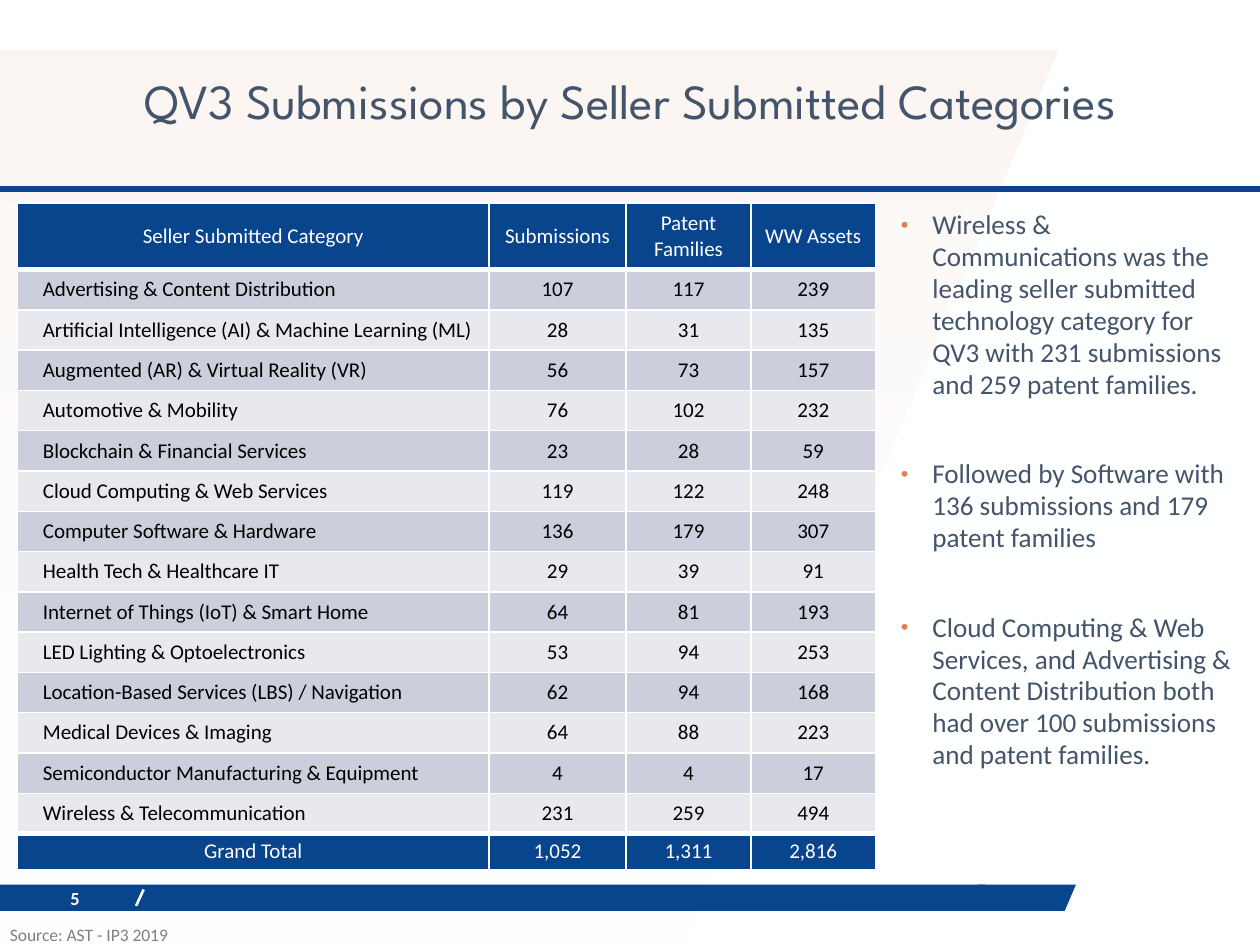
"""Build the slide of QV3 submissions by seller submitted category."""
import dataclasses
import typing

import lxml.etree
import pptx
import pptx.dml.color
import pptx.enum.shapes
import pptx.enum.text
import pptx.oxml.ns
import pptx.util

Inches = pptx.util.Inches
Pt = pptx.util.Pt
RGBColor = pptx.dml.color.RGBColor
Align = pptx.enum.text.PP_ALIGN
Anchor = pptx.enum.text.MSO_ANCHOR
qn = pptx.oxml.ns.qn

PAPER = RGBColor(0xFE, 0xFF, 0xFF)
WHITE = RGBColor(0xFF, 0xFF, 0xFF)
BLACK = RGBColor(0, 0, 0)
NAVY = RGBColor(0x09, 0x45, 0x8D)
SLATE = RGBColor(0x44, 0x54, 0x6A)
GRAY = RGBColor(0x80, 0x80, 0x80)
ORANGE = RGBColor(0xDD, 0x81, 0x4D)
CREAM = RGBColor(0xFD, 0xF9, 0xF6)
PEACH = RGBColor(0xEB, 0xB3, 0x94)
BANDS = (RGBColor(0xCC, 0xCF, 0xDB), RGBColor(0xE7, 0xE9, 0xEE))

BODY_FONT = "Calibri"
TITLE = "QV3 Submissions by Seller Submitted Categories"
SOURCE = "Source: AST - IP3 2019"
FINDINGS = (
    "Wireless & Communications was the leading seller submitted technology category "
    "for QV3 with 231 submissions and 259 patent families.",
    "Followed by Software with 136 submissions and 179 patent families",
    "Cloud Computing & Web Services, and Advertising & Content Distribution both had "
    "over 100 submissions and patent families.",
)
HEADINGS = ("Seller Submitted Category", "Submissions", "Patent Families", "WW Assets")
CATEGORIES = (
    ("Advertising & Content Distribution", "107", "117", "239"),
    ("Artificial Intelligence (AI) & Machine Learning (ML)", "28", "31", "135"),
    ("Augmented (AR) & Virtual Reality (VR)", "56", "73", "157"),
    ("Automotive & Mobility", "76", "102", "232"),
    ("Blockchain & Financial Services", "23", "28", "59"),
    ("Cloud Computing & Web Services", "119", "122", "248"),
    ("Computer Software & Hardware", "136", "179", "307"),
    ("Health Tech & Healthcare IT", "29", "39", "91"),
    ("Internet of Things (IoT) & Smart Home", "64", "81", "193"),
    ("LED Lighting & Optoelectronics", "53", "94", "253"),
    ("Location-Based Services (LBS) / Navigation", "62", "94", "168"),
    ("Medical Devices & Imaging", "64", "88", "223"),
    ("Semiconductor Manufacturing & Equipment", "4", "4", "17"),
    ("Wireless & Telecommunication", "231", "259", "494"),
)
TOTALS = ("Grand Total", "1,052", "1,311", "2,816")
COLUMN_WIDTHS = (3.74, 1.09, 0.99, 0.99)


@dataclasses.dataclass(frozen=True)
class RowStyle:
    height: float
    fill: RGBColor
    color: RGBColor
    margin: float = 0
    top: float = 1
    bottom: float = 1
    indented: bool = False


@dataclasses.dataclass(frozen=True)
class Rule:
    start: tuple[float, float]
    end: tuple[float, float]
    color: RGBColor
    width: float


RULES = (Rule((1.14, 7.06), (1.08, 7.19), WHITE, 1.5), Rule((0, 1.5), (10, 1.5), NAVY, 3))


def apply(target: typing.Any, values: dict[str, typing.Any]) -> None:
    for name, value in values.items():
        setattr(target, name, value)


def place(shape: typing.Any, left: float, top: float, width: float, height: float) -> None:
    lengths = zip(("left", "top", "width", "height"), (left, top, width, height))
    apply(shape, {name: Inches(length) for name, length in lengths})


def write(para: typing.Any, text: str, size: float, color: RGBColor,
          font: str = BODY_FONT, bold: bool = False) -> None:
    span = para.add_run()
    span.text = text
    apply(span.font, {"name": font, "size": Pt(size), "bold": bold})
    span.font.color.rgb = color


def add_label(page: typing.Any, area: tuple, text: str, size: float, color: RGBColor,
              bold: bool = False) -> None:
    box = page.shapes.add_textbox(*map(Inches, area))
    apply(box.text_frame, {"word_wrap": True, "vertical_anchor": Anchor.MIDDLE})
    write(box.text_frame.paragraphs[0], text, size, color, bold=bold)


def add_outline(page: typing.Any, points: list[tuple[float, float]]) -> typing.Any:
    corners = [(Inches(x), Inches(y)) for x, y in points]
    builder = page.shapes.build_freeform(*corners[0])
    builder.add_line_segments(corners[1:], close=True)
    shape = builder.convert_to_shape()
    shape.shadow.inherit = False
    shape.line.fill.background()
    return shape


def add_rule(page: typing.Any, rule: Rule) -> None:
    line = page.shapes.add_connector(
        pptx.enum.shapes.MSO_CONNECTOR.STRAIGHT, *map(Inches, rule.start + rule.end))
    line.line.color.rgb = rule.color
    line.line.width = Pt(rule.width)
    lxml.etree.SubElement(line._element.spPr, qn("a:effectLst"))


def add_backdrop(page: typing.Any) -> None:
    panel = add_outline(page, [(0, 0.4), (8.39, 0.4), (5.25, 7.9), (0, 7.9)])
    panel.fill.gradient()
    panel.fill.gradient_angle = 90
    for stop, color, opacity in zip(panel.fill.gradient_stops, (CREAM, PEACH), (0, 13)):
        stop.color.rgb = color
        tint = stop._gs.find(qn("a:srgbClr"))
        lxml.etree.SubElement(tint, qn("a:alpha"), val=str(opacity * 1000))
    tip = add_outline(page, [(7.76, 7.02), (8.54, 7.02), (8.45, 7.23), (7.76, 7.23)])
    bar = page.shapes.add_shape(
        pptx.enum.shapes.MSO_SHAPE.RECTANGLE, *map(Inches, (0, 7.02, 7.82, 0.21)))
    bar.shadow.inherit = False
    bar.line.fill.background()
    for shape in (tip, bar):
        shape.fill.solid()
        shape.fill.fore_color.rgb = NAVY
    add_label(page, (0.46, 7.03, 0.61, 0.19), "5", 10.5, WHITE, bold=True)
    for rule in RULES:
        add_rule(page, rule)


def set_borders(cell: typing.Any, style: RowStyle) -> None:
    properties = cell._tc.get_or_add_tcPr()
    widths = {"lnL": 1, "lnR": 1, "lnT": style.top, "lnB": style.bottom}
    for position, (side, width) in enumerate(widths.items()):
        edge = lxml.etree.Element(qn(f"a:{side}"), w=str(Pt(width)))
        fill = lxml.etree.SubElement(edge, qn("a:solidFill"))
        lxml.etree.SubElement(fill, qn("a:srgbClr"), val=str(WHITE))
        properties.insert(position, edge)


def fill_row(table: typing.Any, index: int, texts: tuple, style: RowStyle) -> None:
    table.rows[index].height = Inches(style.height)
    sides = ("left", "right", "top", "bottom")
    for column, text in enumerate(texts):
        cell = table.cell(index, column)
        apply(cell, {f"margin_{side}": Inches(style.margin) for side in sides})
        cell.vertical_anchor = Anchor.MIDDLE
        cell.fill.solid()
        cell.fill.fore_color.rgb = style.fill
        set_borders(cell, style)
        para = cell.text_frame.paragraphs[0]
        if style.indented and column == 0:
            para._p.get_or_add_pPr().set("marL", str(Inches(0.2)))
        else:
            para.alignment = Align.CENTER
        write(para, text, 12, style.color)


def add_category_table(page: typing.Any) -> None:
    rows = [(HEADINGS, RowStyle(0.53, NAVY, WHITE, margin=0.05, bottom=3))]
    rows += [(texts, RowStyle(0.32, BANDS[index % 2], BLACK, indented=True))
             for index, texts in enumerate(CATEGORIES)]
    rows.append((TOTALS, RowStyle(0.29, NAVY, WHITE, top=3)))
    frame = page.shapes.add_table(
        len(rows), len(COLUMN_WIDTHS), *map(Inches, (0.14, 1.61, 6.81, 5.3)))
    for column, width in zip(frame.table.columns, COLUMN_WIDTHS):
        column.width = Inches(width)
    for index, (texts, style) in enumerate(rows):
        fill_row(frame.table, index, texts, style)


def add_bullet(para: typing.Any) -> None:
    properties = para._p.get_or_add_pPr()
    apply_indent = {"marL": Inches(0.25), "indent": Inches(-0.25)}
    for name, length in apply_indent.items():
        properties.set(name, str(length))
    color = lxml.etree.SubElement(properties, qn("a:buClr"))
    lxml.etree.SubElement(color, qn("a:srgbClr"), val=str(ORANGE))
    lxml.etree.SubElement(properties, qn("a:buSzPct"), val="80000")
    lxml.etree.SubElement(properties, qn("a:buFont"), typeface="Arial")
    lxml.etree.SubElement(properties, qn("a:buChar"), char="•")


def fill_title(page: typing.Any) -> None:
    title = page.shapes.title
    place(title, 0.46, 0.4, 9.08, 0.85)
    apply(title.text_frame, {"vertical_anchor": Anchor.MIDDLE, "word_wrap": True,
                             "auto_size": pptx.enum.text.MSO_AUTO_SIZE.NONE})
    para = title.text_frame.paragraphs[0]
    apply(para, {"alignment": Align.CENTER, "line_spacing": 0.9})
    write(para, TITLE, 28, SLATE, font="League Spartan")


def fill_findings(body: typing.Any) -> None:
    place(body, 7.05, 1.61, 2.87, 5.31)
    frame = body.text_frame
    apply(frame, {"vertical_anchor": Anchor.TOP, "word_wrap": True,
                  "auto_size": pptx.enum.text.MSO_AUTO_SIZE.NONE})
    for index, text in enumerate(FINDINGS):
        para = frame.add_paragraph() if index else frame.paragraphs[0]
        add_bullet(para)
        apply(para, {"space_before": Pt(33 if index else 0), "line_spacing": 0.98})
        write(para, text, 15.5, SLATE)


def main() -> None:
    deck = pptx.Presentation()
    apply(deck, {"slide_width": Inches(10), "slide_height": Inches(7.5)})
    page = deck.slides.add_slide(deck.slide_layouts[1])
    page.background.fill.solid()
    page.background.fill.fore_color.rgb = PAPER
    title, body = page.placeholders
    add_backdrop(page)
    fill_title(page)
    page.shapes._spTree.append(title._element)
    add_category_table(page)
    fill_findings(body)
    page.shapes._spTree.append(body._element)
    add_label(page, (-0.02, 7.28, 3.99, 0.27), SOURCE, 10, GRAY)
    deck.save("out.pptx")


if __name__ == "__main__":
    main()
